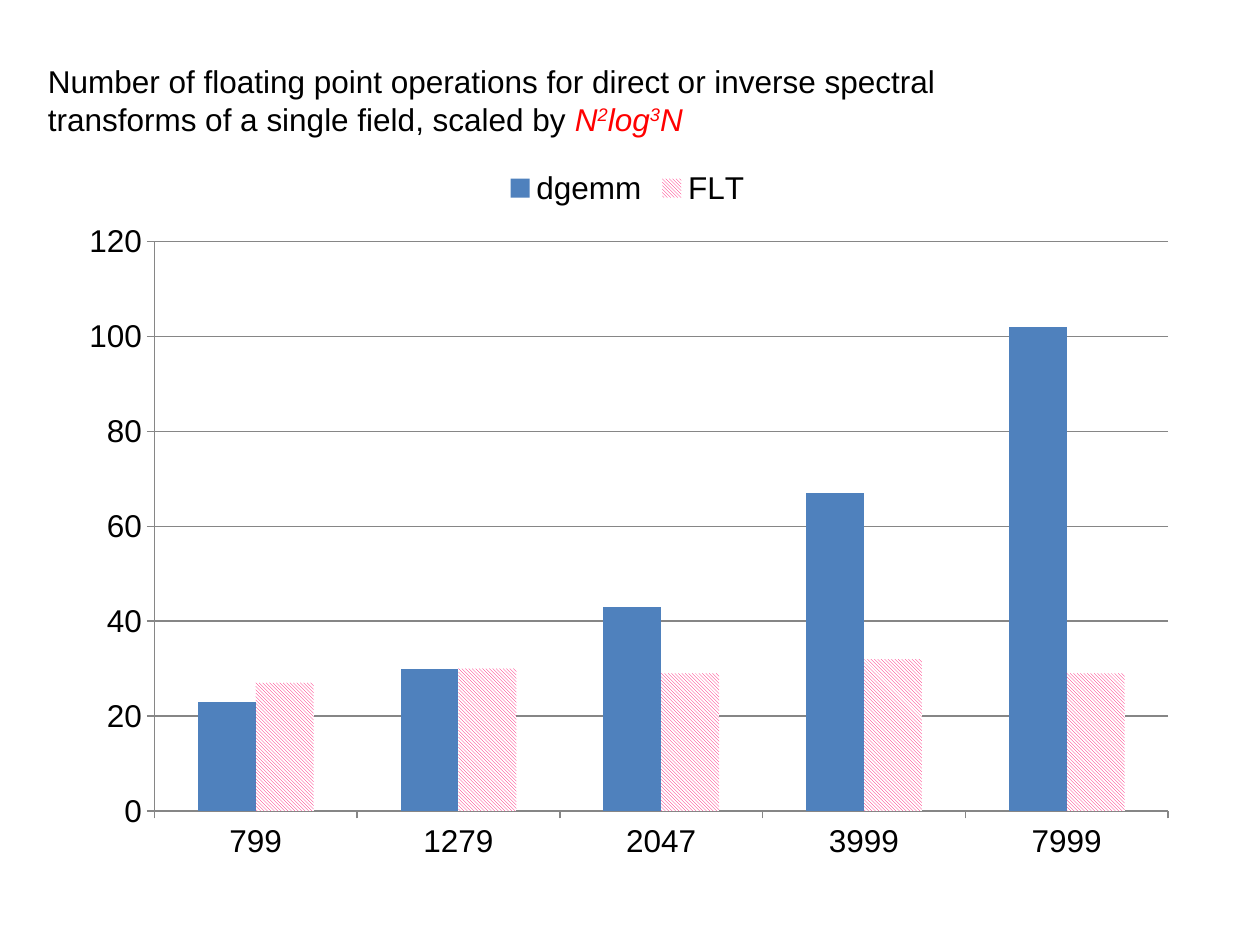
from dataclasses import dataclass

from lxml.etree import SubElement
from pptx import Presentation
from pptx.chart.data import CategoryChartData as Data
from pptx.dml.color import RGBColor as RGB
from pptx.enum.chart import XL_CHART_TYPE as Kind, XL_LEGEND_POSITION as Side
from pptx.enum.chart import XL_TICK_MARK as Tick
from pptx.enum.dml import MSO_PATTERN as Pattern
from pptx.enum.text import MSO_ANCHOR as Anchor, PP_ALIGN as Align
from pptx.oxml.ns import qn
from pptx.util import Inches, Pt

WIDE, HIGH = Inches(10), Inches(7.5)
COLORS = {"ink": "000000", "red": "FF0000", "blue": "4F81BD",
          "pink": "FF0066", "white": "FFFFFF", "grid": "868686"}
FONT = {"name": "Arial", "size": Pt(18), "bold": False}


@dataclass
class Box:
    """Left, top, width and height as shares of the slide."""
    x: float
    y: float
    w: float
    h: float

    def lengths(self) -> tuple:
        return (int(self.x * WIDE), int(self.y * HIGH),
                int(self.w * WIDE), int(self.h * HIGH))


@dataclass
class Part:
    text: str
    color: str = "ink"
    italic: bool = False
    raised: bool = False


@dataclass
class Series:
    name: str
    values: tuple
    color: str
    hatched: bool = False


def formula(text: str, raised: bool = False) -> Part:
    return Part(text, "red", True, raised)


TITLE = Box(0.028, 0.059, 0.902, 0.121)
CHART = Box(0.051, 0.164, 0.894, 0.763)
PLOT = {"x": 0.08, "y": 0.12, "w": 0.9, "h": 0.79}
LINES = [
    [Part("Number of floating point operations for direct or inverse spectral")],
    [Part("transforms of a single field, scaled by "), formula("N"),
     formula("2", True), formula("log"), formula("3", True), formula("N")],
]
SIZES = ("799", "1279", "2047", "3999", "7999")
SERIES = [Series("dgemm", (23, 30, 43, 67, 102), "blue"),
          Series("FLT", (27, 30, 29, 32, 29), "pink", True)]


def rgb(name: str) -> RGB:
    return RGB.from_string(COLORS[name])


def apply(target, values: dict) -> None:
    for key, value in values.items():
        setattr(target, key, value)


def style(font, color: str = "ink", **extra) -> None:
    apply(font, FONT | extra)
    font.color.rgb = rgb(color)


def draw_title(shape) -> None:
    apply(shape, dict(zip(("left", "top", "width", "height"), TITLE.lengths())))
    frame = shape.text_frame
    apply(frame, {"word_wrap": True, "vertical_anchor": Anchor.TOP})
    for i, line in enumerate(LINES):
        para = frame.add_paragraph() if i else frame.paragraphs[0]
        para.alignment = Align.LEFT
        for part in line:
            run = para.add_run()
            run.text = part.text
            style(run.font, part.color, italic=part.italic)
            if part.raised:
                run.font._element.set("baseline", "30000")


def place_plot(chart) -> None:
    """Fix the inner plot area at shares of the chart."""
    area = chart._chartSpace.chart.plotArea
    for old in area.findall(qn("c:layout")):
        area.remove(old)
    layout = SubElement(area, qn("c:layout"))
    area.insert(0, layout)
    manual = SubElement(layout, qn("c:manualLayout"))
    values = {"layoutTarget": "inner", "xMode": "edge", "yMode": "edge"} | PLOT
    for key, value in values.items():
        SubElement(manual, qn(f"c:{key}")).set("val", str(value))


def paint(fill, item: Series) -> None:
    if item.hatched:
        fill.patterned()
        fill.pattern = Pattern.DARK_DOWNWARD_DIAGONAL
        fill.fore_color.rgb = rgb(item.color)
        fill.back_color.rgb = rgb("white")
    else:
        fill.solid()
        fill.fore_color.rgb = rgb(item.color)


def draw_line(line) -> None:
    line.color.rgb = rgb("grid")
    line.width = Pt(0.75)


def draw_chart(slide) -> None:
    data = Data()
    data.categories = SIZES
    for item in SERIES:
        data.add_series(item.name, item.values)
    chart = slide.shapes.add_chart(
        Kind.COLUMN_CLUSTERED, *CHART.lengths(), data).chart
    apply(chart, {"has_title": False, "has_legend": True})
    style(chart.font)
    apply(chart.legend, {"position": Side.TOP, "include_in_layout": False})
    apply(chart.plots[0], {"gap_width": 150, "overlap": 0,
                           "vary_by_categories": False})
    for item, bars in zip(SERIES, chart.plots[0].series):
        bars.invert_if_negative = False
        paint(bars.format.fill, item)
    for axis in (chart.category_axis, chart.value_axis):
        apply(axis, {"major_tick_mark": Tick.OUTSIDE,
                     "minor_tick_mark": Tick.NONE})
        draw_line(axis.format.line)
    scale = chart.value_axis
    apply(scale, {"minimum_scale": 0, "maximum_scale": 120,
                  "major_unit": 20, "has_major_gridlines": True})
    draw_line(scale.major_gridlines.format.line)
    place_plot(chart)


def main() -> None:
    deck = Presentation()
    apply(deck, {"slide_width": WIDE, "slide_height": HIGH})
    slide = deck.slides.add_slide(deck.slide_layouts.get_by_name("Title Only"))
    draw_chart(slide)
    draw_title(slide.shapes.title)
    deck.save("out.pptx")


if __name__ == "__main__":
    main()
